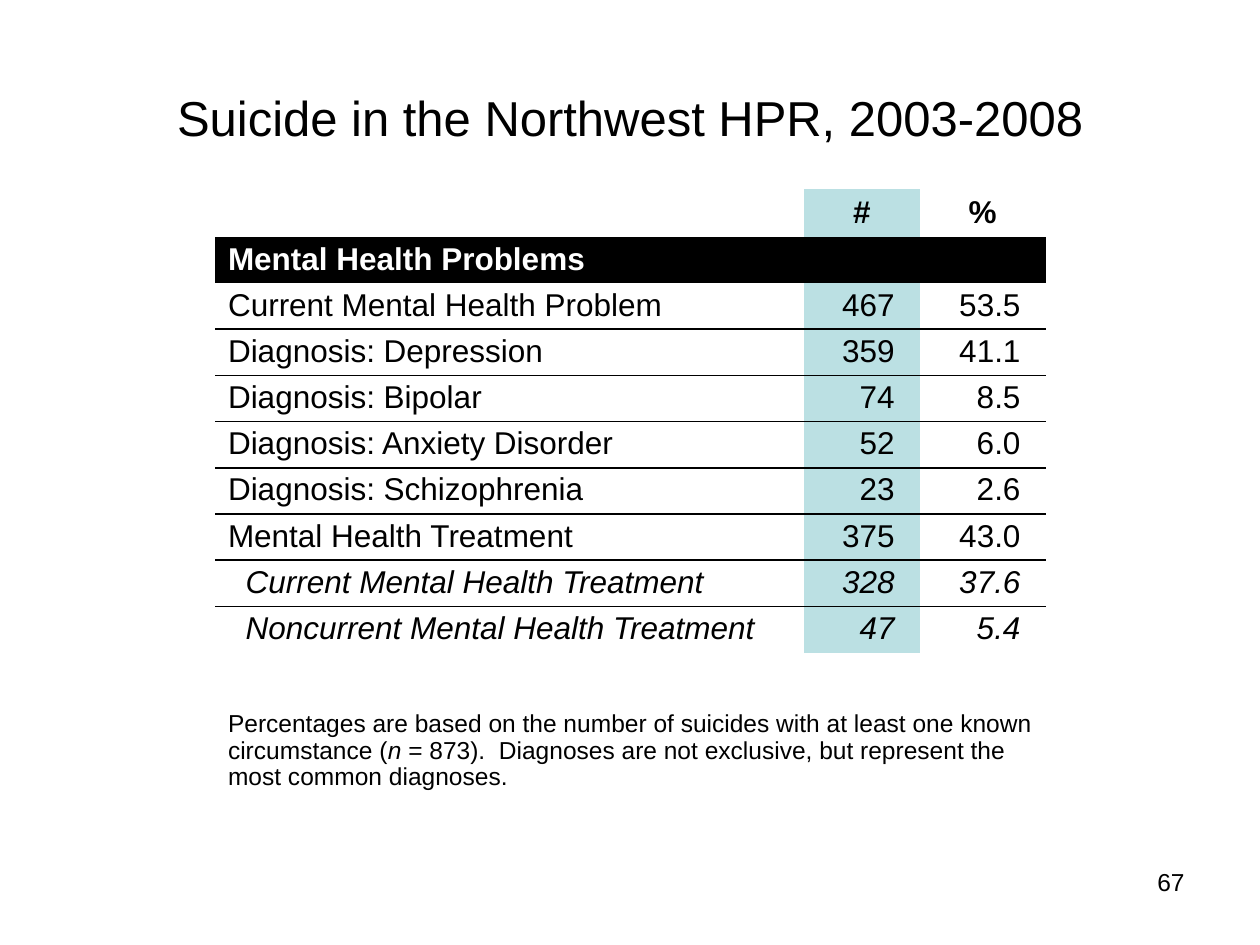
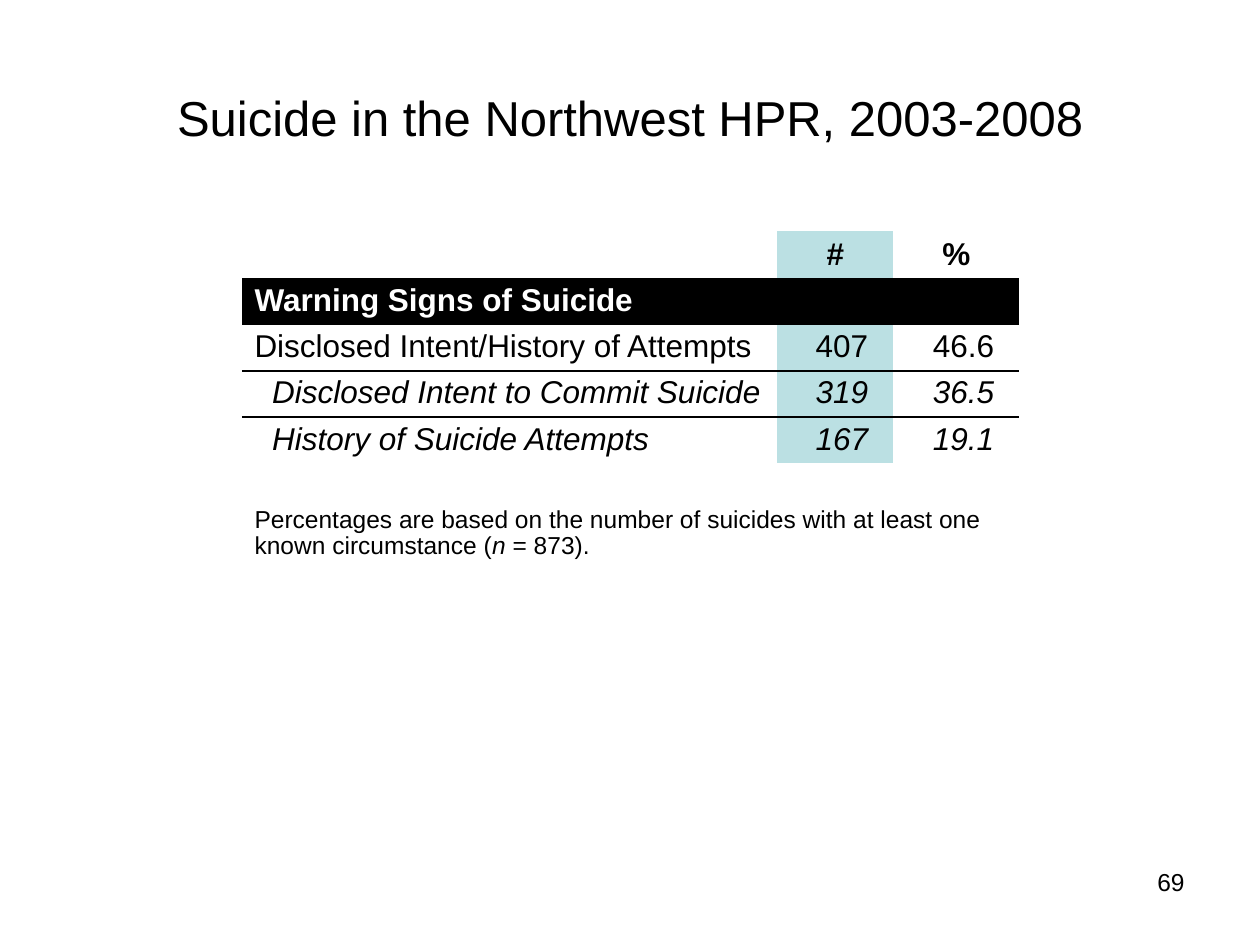
"""Builds two slides with tables on suicide circumstances in the Northwest HPR."""
from dataclasses import dataclass

from lxml import etree
from pptx import Presentation
from pptx import util as u
from pptx.dml import color
from pptx.enum import text
from pptx.oxml import ns

FONT = "Arial"
BLACK, WHITE, TEAL = "000000", "FFFFFF", "BBE0E3"
TITLE = "Suicide in the Northwest HPR, 2003-2008"
NOTE = "Percentages are based on the number of suicides with at least one known circumstance ("
PLAIN_STYLE = "{2D5ABB26-0587-4C30-8999-92F81FD0307C}"
HEAD_H, ROW_H, LINE_H = 0.38, 3.3 / 9, 0.2
COUNT_W, PERCENT_W = 0.92, 1
LEFT, CENTER, RIGHT = text.PP_ALIGN.LEFT, text.PP_ALIGN.CENTER, text.PP_ALIGN.RIGHT


@dataclass
class Row:
    """One line of a table."""
    label: str
    count: str
    percent: str
    sub: bool = False


@dataclass
class Page:
    """One slide: its table, the note under it and its number."""
    number: str
    left: float
    top: float
    label_w: float
    heading: str
    rows: list[Row]
    gap: float
    note_end: str
    note_lines: int


PAGES = [
    Page("67", 1.71, 1.5, 4.67, "Mental Health Problems", [
        Row("Current Mental Health Problem", "467", "53.5"),
        Row("Diagnosis: Depression", "359", "41.1"),
        Row("Diagnosis: Bipolar", "74", "8.5"),
        Row("Diagnosis: Anxiety Disorder", "52", "6.0"),
        Row("Diagnosis: Schizophrenia", "23", "2.6"),
        Row("Mental Health Treatment", "375", "43.0"),
        Row("Current Mental Health Treatment", "328", "37.6", True),
        Row("Noncurrent Mental Health Treatment", "47", "5.4", True),
    ], 0.41, "= 873).  Diagnoses are not exclusive, but represent the most common diagnoses.", 3),
    Page("69", 1.92, 1.83, 4.25, "Warning Signs of Suicide", [
        Row("Disclosed Intent/History of Attempts", "407", "46.6"),
        Row("Disclosed Intent to Commit Suicide", "319", "36.5", True),
        Row("History of Suicide Attempts", "167", "19.1", True),
    ], 0.28, "= 873).", 2),
]


def rgb(value: str) -> color.RGBColor:
    """Turn a hex string into a colour."""
    return color.RGBColor.from_string(value)


def set_default_font(prs) -> None:
    """Make the font the default of the presentation and its master."""
    for root in (prs.element, prs.slide_master.element):
        for latin in root.iter(ns.qn("a:latin")):
            latin.set("typeface", FONT)


def style(r, size: float, hue: str = BLACK, bold: bool = False, italic: bool = False) -> None:
    """Format one run."""
    r.font.name, r.font.size = FONT, u.Pt(size)
    r.font.bold, r.font.italic = bold, italic
    r.font.color.rgb = rgb(hue)


def add_text(slide, words: str, box: tuple, size: float, align, anchor) -> None:
    """Add a one-line text box."""
    tf = slide.shapes.add_textbox(*map(u.Inches, box)).text_frame
    tf.word_wrap, tf.vertical_anchor = True, anchor
    p = tf.paragraphs[0]
    p.text, p.alignment = words, align
    style(p.runs[0], size)


def fill_cell(cell, words: str, align=LEFT, left: float = 0.1, right: float = 0.1, **look) -> None:
    """Write and format the text of a table cell."""
    cell.margin_left, cell.margin_right = u.Inches(left), u.Inches(right)
    p = cell.text_frame.paragraphs[0]
    p.text, p.alignment, p.line_spacing = words, align, 0.95
    style(p.runs[0], 18, **look)


def paint(cell, hue: str) -> None:
    """Give a cell a solid fill."""
    cell.fill.solid()
    cell.fill.fore_color.rgb = rgb(hue)


def underline(cell) -> None:
    """Draw a thin line under a cell."""
    ln = etree.Element(ns.qn("a:lnB"), w=str(u.Pt(1)))
    fill = etree.SubElement(ln, ns.qn("a:solidFill"))
    etree.SubElement(fill, ns.qn("a:srgbClr"), val=BLACK)
    cell._tc.get_or_add_tcPr().insert(0, ln)


def add_note(cell, ending: str) -> None:
    """Write the note with its italic n."""
    p = cell.text_frame.paragraphs[0]
    p.line_spacing = 0.95
    for words, italic in ((NOTE, False), ("n ", True), (ending, False)):
        r = p.add_run()
        r.text = words
        style(r, 14, italic=italic)


def add_table(slide, page: Page) -> None:
    """Add the table of a page, with its note as the last row."""
    widths = [page.label_w, COUNT_W, PERCENT_W]
    heights = [HEAD_H] + [ROW_H] * (len(page.rows) + 1) + [page.gap, 0.08 + LINE_H * page.note_lines]
    box = map(u.Inches, (page.left, page.top, sum(widths), sum(heights)))
    table = slide.shapes.add_table(len(heights), len(widths), *box).table
    table.first_row = table.horz_banding = False
    table._tbl.tblPr.find(ns.qn("a:tableStyleId")).text = PLAIN_STYLE
    for col, width in zip(table.columns, widths):
        col.width = u.Inches(width)
    for row, height in zip(table.rows, heights):
        row.height = u.Inches(height)
    for cell in table.iter_cells():
        cell.fill.background()
        cell.vertical_anchor = text.MSO_ANCHOR.BOTTOM
        cell.margin_top, cell.margin_bottom = u.Inches(0.02), u.Inches(0.05)

    last = len(heights) - 1
    for i in (1, last):
        table.cell(i, 0).merge(table.cell(i, 2))
    for i, words in ((1, "#"), (2, "%")):
        fill_cell(table.cell(0, i), words, CENTER, bold=True)
    paint(table.cell(0, 1), TEAL)
    fill_cell(table.cell(1, 0), page.heading, hue=WHITE, bold=True)
    paint(table.cell(1, 0), BLACK)

    for i, row in enumerate(page.rows, 2):
        label, count, percent = table.rows[i].cells
        fill_cell(label, row.label, left=0.24 if row.sub else 0.1, right=0, italic=row.sub)
        fill_cell(count, row.count, RIGHT, right=0.2, italic=row.sub)
        fill_cell(percent, row.percent, RIGHT, right=0.2, italic=row.sub)
        paint(count, TEAL)
        if row is not page.rows[-1]:
            for cell in (label, count, percent):
                underline(cell)

    for cell in table.rows[last - 1].cells:
        cell.margin_top = cell.margin_bottom = 0
    add_note(table.cell(last, 0), page.note_end)


def main() -> None:
    """Build and save the slides."""
    prs = Presentation()
    prs.slide_width, prs.slide_height = u.Inches(10), u.Inches(7.5)
    set_default_font(prs)
    for page in PAGES:
        slide = prs.slides.add_slide(prs.slide_layouts[6])
        add_text(slide, page.number, (7.17, 6.83, 2.33, 0.52), 14, RIGHT, text.MSO_ANCHOR.TOP)
        add_text(slide, TITLE, (0.5, 0.3, 9, 1.25), 28, CENTER, text.MSO_ANCHOR.MIDDLE)
        add_table(slide, page)
    prs.save("out.pptx")


if __name__ == "__main__":
    main()
